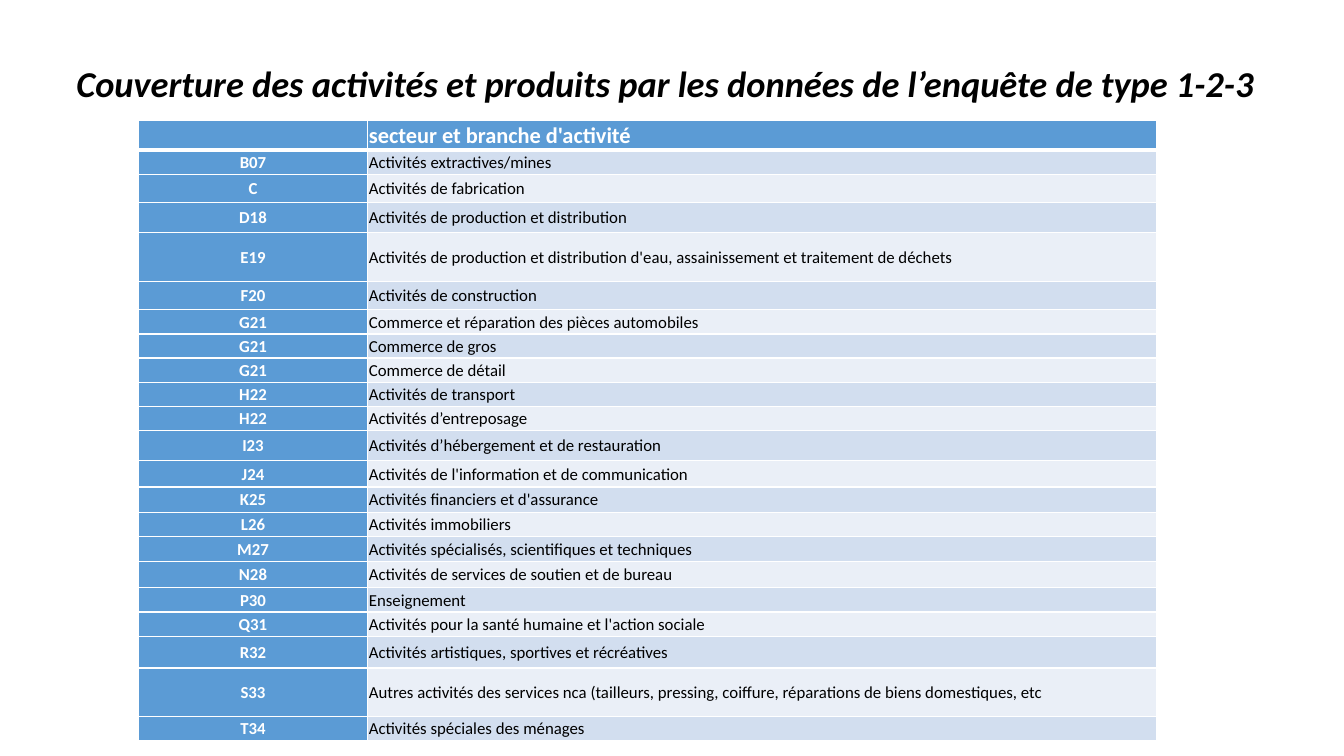
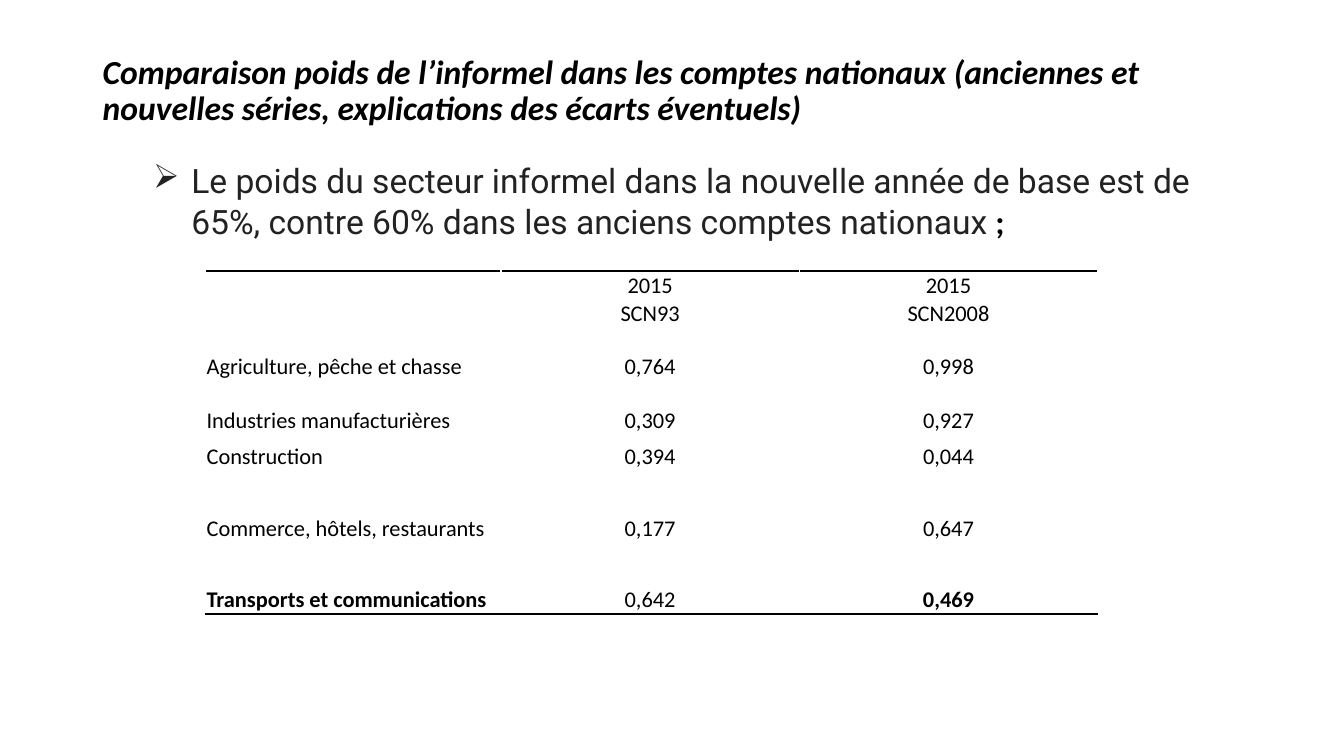
import pptx
import pptx.util
import pptx.dml.color
import pptx.enum.text
import pptx.oxml.ns
import lxml.etree

BLACK, WHITE, INK = "000000", "FFFFFF", "222222"
BLUE, BAND_DARK, BAND_LIGHT = "5B9BD5", "D2DEEF", "EAEFF7"
GRID_COLUMNS, GRID_ROWS = 160, 90
ALIGN = pptx.enum.text.PP_ALIGN
ANCHOR = pptx.enum.text.MSO_ANCHOR


def colour(hex_code):
    return pptx.dml.color.RGBColor.from_string(hex_code)


def add_xml(parent, tag, **attributes):
    return lxml.etree.SubElement(parent, pptx.oxml.ns.qn(tag), attributes)


def write(paragraph, text, size=24, font="Calibri", color=BLACK,
          bold=False, italic=False, align=ALIGN.LEFT, spacing=None):
    paragraph.alignment = align
    if spacing:
        paragraph.line_spacing = spacing
    if not text:
        add_xml(paragraph._p, "a:endParaRPr", sz=str(size * 100))
        return
    run = paragraph.add_run()
    run.text = text
    run.font.size = pptx.util.Pt(size)
    run.font.name = font
    run.font.bold, run.font.italic = bold, italic
    run.font.color.rgb = colour(color)


class Deck:
    """Shared style and the slide being filled; lengths are in grid units."""

    def __init__(self):
        self.show = pptx.Presentation()
        self.show.slide_width = pptx.util.Inches(13.33)
        self.show.slide_height = pptx.util.Inches(7.5)
        self.slide = None

    def new_slide(self):
        self.slide = self.show.slides.add_slide(self.show.slide_layouts[6])

    def across(self, columns):
        return round(self.show.slide_width * columns / GRID_COLUMNS)

    def down(self, rows):
        return round(self.show.slide_height * rows / GRID_ROWS)

    def text_box(self, left, top, width, height, anchor=ANCHOR.TOP):
        frame = self.slide.shapes.add_textbox(
            self.across(left), self.down(top),
            self.across(width), self.down(height)).text_frame
        frame.word_wrap = True
        frame.vertical_anchor = anchor
        return frame.paragraphs[0]

    def title(self, text, left, top, width, height, size, **layout):
        paragraph = self.text_box(left, top, width, height, ANCHOR.MIDDLE)
        write(paragraph, text, size=size, bold=True, italic=True, **layout)

    def bullet(self, parts, left, top, width, height):
        paragraph = self.text_box(left, top, width, height)
        for text, style in parts:
            write(paragraph, text, **style)
        properties = paragraph._p.get_or_add_pPr()
        properties.set("marL", str(pptx.util.Inches(0.88)))
        properties.set("indent", str(pptx.util.Inches(-0.38)))
        add_xml(properties, "a:buChar", char="➢")

    def table(self, left, top, widths, heights):
        grid = self.slide.shapes.add_table(
            len(heights), len(widths), self.across(left), self.down(top),
            self.across(sum(widths)), self.down(sum(heights))).table
        grid.first_row = grid.horz_banding = False
        for column, width in zip(grid.columns, widths):
            column.width = self.across(width)
        for row, height in zip(grid.rows, heights):
            row.height = self.down(height)
        return grid

    def cell(self, cell, text, fill, borders, anchor=ANCHOR.MIDDLE, **style):
        cell.margin_left = cell.margin_right = cell.margin_top = pptx.util.Inches(0.01)
        cell.margin_bottom = 0
        cell.vertical_anchor = anchor
        # Borders come before the fill, in the order L, R, T, B
        properties = cell._tc.get_or_add_tcPr()
        for side in "LRTB":
            if side in borders:
                color, width = borders[side]
                line = add_xml(properties, f"a:ln{side}", w=str(pptx.util.Pt(width)))
                solid = add_xml(line, "a:solidFill")
                add_xml(solid, "a:srgbClr", val=color)
        cell.fill.solid()
        cell.fill.fore_color.rgb = colour(fill)
        write(cell.text_frame.paragraphs[0], text, **style)


# Code, activity and row height
ACTIVITIES = [
    ("", "secteur et branche d'activité", 3.6),
    ("B07", "Activités extractives/mines", 2.88),
    ("C", "Activités de fabrication", 3.36),
    ("D18", "Activités de production et distribution", 3.6),
    ("E19", "Activités de production et distribution d'eau, assainissement et traitement de déchets", 5.76),
    ("F20", "Activités de construction", 3.4),
    ("G21", "Commerce et réparation des pièces automobiles", 2.88),
    ("G21", "Commerce de gros", 2.88),
    ("G21", "Commerce de détail", 2.88),
    ("H22", "Activités de transport", 2.88),
    ("H22", "Activités d’entreposage", 2.88),
    ("I23", "Activités d’hébergement et de restauration", 3.6),
    ("J24", "Activités de l'information et de communication", 3.12),
    ("K25", "Activités financiers et d'assurance", 3),
    ("L26", "Activités immobiliers", 2.88),
    ("M27", "Activités spécialisés, scientifiques et techniques", 3),
    ("N28", "Activités de services de soutien et de bureau", 3.12),
    ("P30", "Enseignement", 2.88),
    ("Q31", "Activités pour la santé humaine et l'action sociale", 2.96),
    ("R32", "Activités artistiques, sportives et récréatives", 3.72),
    ("S33", "Autres activités des services nca (tailleurs, pressing, coiffure, réparations de biens domestiques, etc", 5.76),
    ("T34", "Activités spéciales des ménages", 2.88),
]

# Label, old series, new series and row height
WEIGHTS = [
    ("", "2015", "2015", 3.36),
    ("", "SCN93", "SCN2008", 3.36),
    ("Agriculture, pêche et chasse", "0,764", "0,998", 6.36),
    ("Industries manufacturières", "0,309", "0,927", 6.36),
    ("Construction", "0,394", "0,044", 4.32),
    ("Commerce, hôtels, restaurants", "0,177", "0,647", 8.52),
    ("Transports et communications", "0,642", "0,469", 8.52),
]


def coverage_slide(deck):
    deck.new_slide()
    deck.title("Couverture des activités et produits par les données de l’enquête de type 1-2-3",
               7.92, 6.6, 144.48, 6.6, size=26)
    # Sector table: blue header and code column, banded names
    sectors = deck.table(16.44, 14.28, [27.36, 93.84], [row[-1] for row in ACTIVITIES])
    for index, (code, activity, _) in enumerate(ACTIVITIES):
        header = index == 0
        borders = {side: (WHITE, 1) for side in "LRB"}
        if header:
            borders.update(T=(WHITE, 1), B=(WHITE, 3))
        size = 16 if header else 12
        band = BAND_DARK if index % 2 else BAND_LIGHT
        deck.cell(sectors.cell(index, 0), code, BLUE, borders, size=size,
                  color=WHITE, bold=True, align=ALIGN.CENTER)
        deck.cell(sectors.cell(index, 1), activity, BLUE if header else band, borders,
                  size=size, color=WHITE if header else BLACK, bold=header)


def comparison_slide(deck):
    deck.new_slide()
    deck.title("Comparaison poids de l’informel dans les comptes nationaux "
               "(anciennes et nouvelles séries, explications des écarts éventuels)",
               11.04, 4.8, 138, 12.2, size=24, spacing=0.9)
    deck.bullet([
        ("Le poids du secteur informel dans la nouvelle année de base est de 65%, "
         "contre 60% dans les anciens comptes nationaux", {"font": "Roboto", "color": INK}),
        (" ;", {"bold": True}),
    ], 11.04, 18.48, 138, 12)
    # Weights table: rules above the first row and below the last
    weights = deck.table(24.48, 32.28, [35.16, 35.52, 35.52], [row[-1] for row in WEIGHTS])
    last = len(WEIGHTS) - 1
    for index, (*texts, _) in enumerate(WEIGHTS):
        borders = {0: {"T": (BLACK, 2)}, last: {"B": (BLACK, 2)}}.get(index, {})
        for column, text in enumerate(texts):
            deck.cell(weights.cell(index, column), text, WHITE, borders,
                      anchor=ANCHOR.MIDDLE if index < 2 else ANCHOR.BOTTOM, size=16,
                      bold=index == last and column != 1,
                      align=ALIGN.CENTER if column else ALIGN.LEFT)


def main():
    deck = Deck()
    coverage_slide(deck)
    comparison_slide(deck)
    deck.show.save("out.pptx")


if __name__ == "__main__":
    main()
